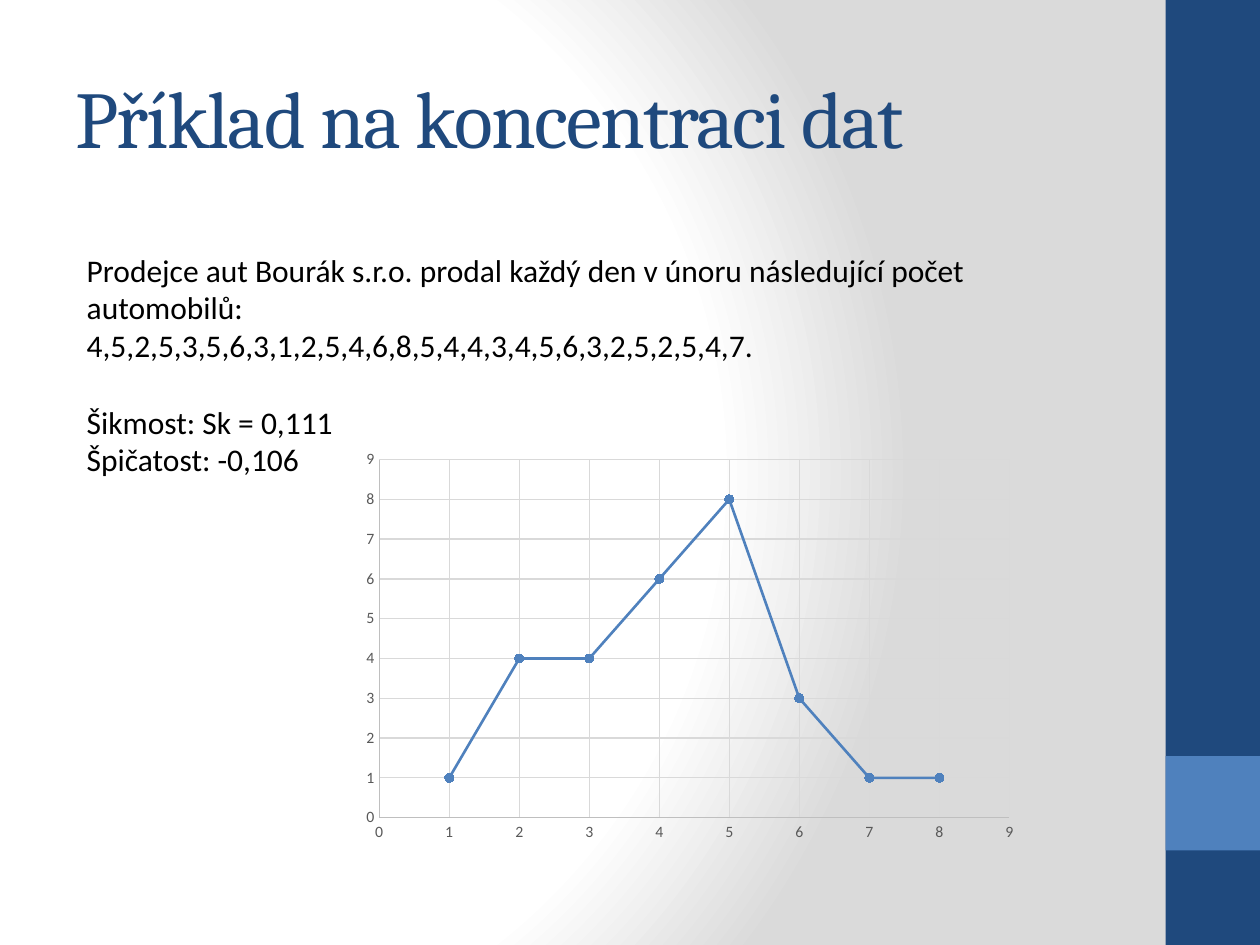
from dataclasses import dataclass

from pptx import Presentation
from pptx import util as u
from pptx.chart.data import XyChartData
from pptx.dml.color import RGBColor
from pptx.enum import chart as charts, shapes, text
from pptx.oxml import parse_xml
from pptx.oxml.ns import nsdecls


@dataclass(frozen=True)
class Theme:
    navy: str = "1F497D"
    blue: str = "4F81BD"
    ink: str = "000000"
    label: str = "595959"
    axis: str = "BFBFBF"
    grid: str = "D9D9D9"
    stops: tuple = ((0, "FFFFFF"), (75, "FFFFFF"), (100, "DADADA"))
    heading: str = "Cambria"
    body: str = "Calibri"
    title_size: int = 46
    body_size: int = 18
    chart_size: int = 10
    label_size: int = 9


class SlideBuilder:
    """Draws styled elements on the current slide."""

    def __init__(self, deck, theme):
        self.theme = theme
        self.page = deck.slides.add_slide(deck.slide_layouts[5])

    def style(self, font, name, size, color):
        font.name = name
        font.size = u.Pt(size)
        font.color.rgb = RGBColor.from_string(color)

    def stroke(self, line, color, width):
        line.color.rgb = RGBColor.from_string(color)
        line.width = u.Pt(width)

    def background(self):
        self.page.background.fill.gradient()
        gradient = self.page.element.xpath(".//p:bg//a:gradFill")[0]
        stops = "".join(
            f'<a:gs pos="{place * 1000}"><a:srgbClr val="{color}"/></a:gs>'
            for place, color in self.theme.stops
        )
        radial = parse_xml(
            f'<a:gradFill {nsdecls("a")} rotWithShape="1"><a:gsLst>{stops}</a:gsLst>'
            '<a:path path="circle"><a:fillToRect l="20000" t="50000" r="100000" b="50000"/>'
            "</a:path></a:gradFill>"
        )
        gradient.getparent().replace(gradient, radial)

    def bar(self, left, top, width, height, color):
        bar = self.page.shapes.add_shape(
            shapes.MSO_SHAPE.RECTANGLE, *map(u.Inches, (left, top, width, height))
        )
        bar.shadow.inherit = False
        bar.fill.solid()
        bar.fill.fore_color.rgb = RGBColor.from_string(color)
        bar.line.fill.background()

    def title(self, left, top, width, height, wording):
        title = self.page.shapes.title
        title.left, title.top, title.width, title.height = map(
            u.Inches, (left, top, width, height)
        )
        frame = title.text_frame
        frame.text = wording
        frame.vertical_anchor = text.MSO_ANCHOR.MIDDLE
        para = frame.paragraphs[0]
        para.alignment = text.PP_ALIGN.LEFT
        span = para.runs[0]
        self.style(span.font, self.theme.heading, self.theme.title_size, self.theme.navy)
        span.font._element.set("spc", "-100")

    def text(self, left, top, width, height, lines):
        box = self.page.shapes.add_textbox(*map(u.Inches, (left, top, width, height)))
        frame = box.text_frame
        frame.word_wrap = True
        frame.text = "\n".join(line for line, gap in lines)
        for para, (line, gap) in zip(frame.paragraphs, lines):
            para.space_before = u.Pt(gap)
            for span in para.runs:
                self.style(span.font, self.theme.body, self.theme.body_size, self.theme.ink)

    def axis(self, axis):
        axis.minimum_scale, axis.maximum_scale, axis.major_unit = 0, 9, 1
        axis.has_title = False
        axis.has_major_gridlines = True
        axis.major_tick_mark = axis.minor_tick_mark = charts.XL_TICK_MARK.NONE
        self.stroke(axis.format.line, self.theme.axis, 0.75)
        self.stroke(axis.major_gridlines.format.line, self.theme.grid, 0.75)
        self.style(
            axis.tick_labels.font, self.theme.body, self.theme.label_size, self.theme.label
        )

    def scatter(self, left, top, width, height, counts):
        data = XyChartData()
        points = data.add_series("Series 1")
        for sold, days in enumerate(counts, start=1):
            points.add_data_point(sold, days)
        chart = self.page.shapes.add_chart(
            charts.XL_CHART_TYPE.XY_SCATTER_LINES,
            *map(u.Inches, (left, top, width, height)),
            data,
        ).chart
        self.style(chart.font, self.theme.body, self.theme.chart_size, self.theme.ink)
        chart.has_title = chart.has_legend = False
        chart.plots[0].vary_by_categories = False
        for axis in (chart.category_axis, chart.value_axis):
            self.axis(axis)
        series = chart.plots[0].series[0]
        series.smooth = False
        self.stroke(series.format.line, self.theme.blue, 1.5)
        series.marker.style = charts.XL_MARKER_STYLE.CIRCLE
        series.marker.size = 5
        series.marker.format.fill.solid()
        series.marker.format.fill.fore_color.rgb = RGBColor.from_string(self.theme.blue)
        self.stroke(series.marker.format.line, self.theme.blue, 0.75)


def main():
    deck = Presentation()
    deck.slide_width, deck.slide_height = u.Inches(10), u.Inches(7.5)
    theme = Theme()
    slide = SlideBuilder(deck, theme)
    slide.background()
    slide.bar(9.25, 0, 0.75, 7.5, theme.navy)
    slide.bar(9.25, 6, 0.75, 0.75, theme.blue)
    slide.title(0.5, 0.3, 8.33, 1.25, "Příklad na koncentraci dat")
    slide.text(0.59, 1.94, 8.03, 1.92, [
        ("Prodejce aut Bourák s.r.o. prodal každý den v únoru následující počet automobilů:", 0),
        ("4,5,2,5,3,5,6,3,1,2,5,4,6,8,5,4,4,3,4,5,6,3,2,5,2,5,4,7.", 0),
        ("Šikmost: Sk = 0,111", 22),
        ("Špičatost: -0,106", 0),
    ])
    slide.scatter(2.8, 3.51, 5.35, 3.23, [1, 4, 4, 6, 8, 3, 1, 1])
    deck.save("out.pptx")


if __name__ == "__main__":
    main()
